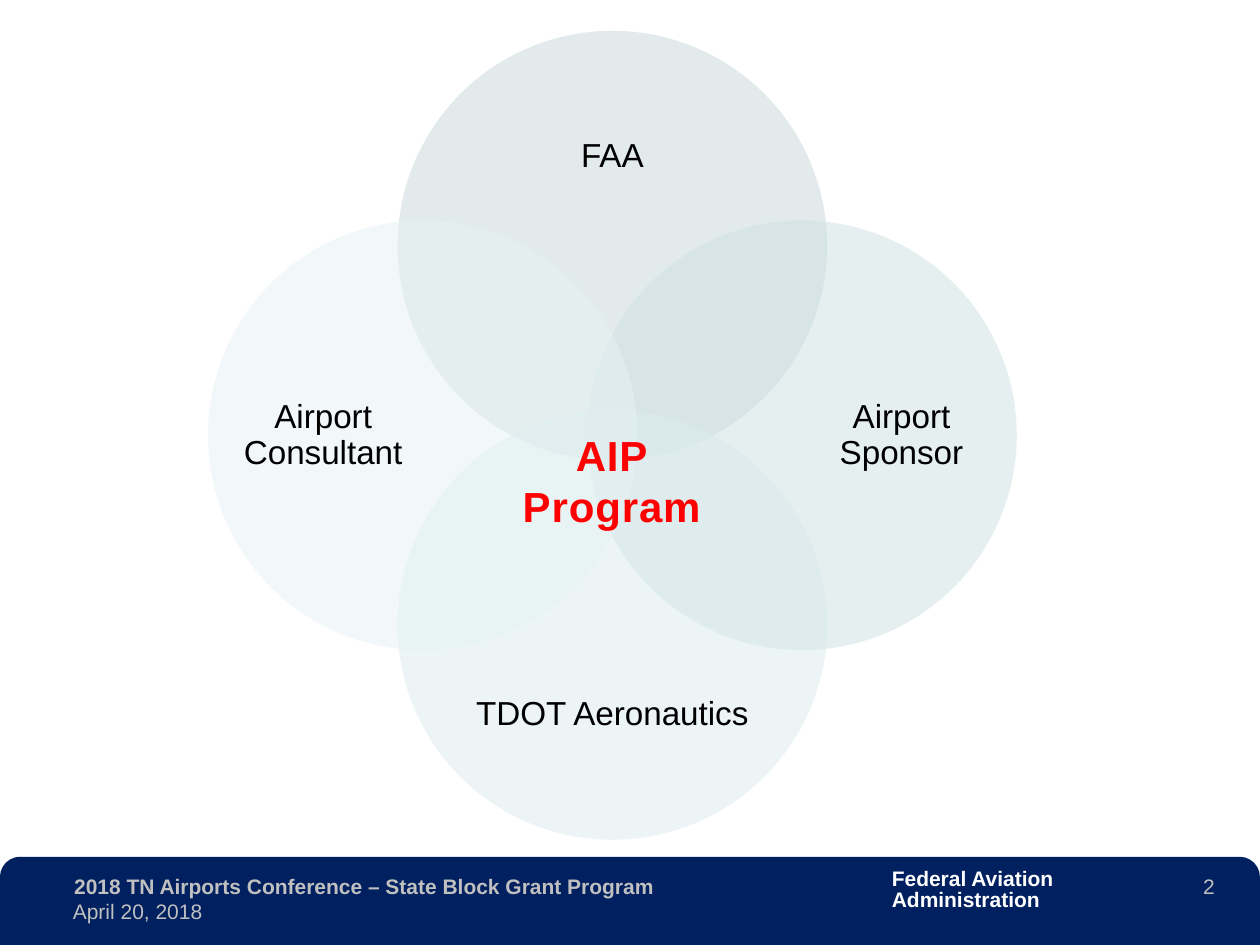
from dataclasses import dataclass

from lxml import etree
from pptx import Presentation
from pptx import util as u
from pptx.dml.color import RGBColor
from pptx.enum import shapes, text
from pptx.oxml.ns import qn

COLUMNS, ROWS = 100, 75
CENTRE = (48.6, 34.55)
DIAMETER = 34.1
CIRCLE_REACH = 15.05
PADDING = (1, 0.5)


@dataclass(frozen=True)
class Theme:
    font: str = "Arial"
    navy: str = "002060"
    silver: str = "C0C0C0"
    white: str = "FFFFFF"
    black: str = "000000"
    red: str = "FF0000"
    footer_size: int = 12
    label_size: int = 19
    heading_size: int = 24
    opacity: int = 50


@dataclass(frozen=True)
class Area:
    left: float
    top: float
    width: float
    height: float


@dataclass(frozen=True)
class Style:
    size: int
    color: str
    bold: bool = False
    align: text.PP_ALIGN = text.PP_ALIGN.LEFT
    spacing: float = 1.0


@dataclass(frozen=True)
class Partner:
    name: str
    color: str
    across: int
    down: int


@dataclass(frozen=True)
class FooterText:
    lines: tuple[str, ...]
    area: Area
    style: Style
    wrap: bool = True


THEME = Theme()
LABEL = Style(THEME.label_size, THEME.black, align=text.PP_ALIGN.CENTER, spacing=0.9)
HEADING = Style(THEME.heading_size, THEME.red, True, text.PP_ALIGN.CENTER)
PARTNERS = (
    Partner("FAA", "C6D7D9", 0, -1),
    Partner("Airport Sponsor", "CFE1E3", 1, 0),
    Partner("TDOT Aeronautics", "DAEBEC", 0, 1),
    Partner("Airport Consultant", "E6F3F4", -1, 0),
)
FOOTER = (
    FooterText(("Federal Aviation", "Administration"), Area(69.8, 68.5, 15, 4.4),
               Style(THEME.footer_size, THEME.white, True, spacing=0.85), wrap=False),
    FooterText(("2018 TN Airports Conference – State Block Grant Program",),
               Area(4.9, 68.8, 52.3, 3), Style(THEME.footer_size, THEME.silver, True)),
    FooterText(("April 20, 2018",), Area(4.8, 70.8, 40.9, 3),
               Style(THEME.footer_size, THEME.silver)),
    FooterText(("2",), Area(89.8, 68.8, 7.6, 3),
               Style(THEME.footer_size, THEME.silver, align=text.PP_ALIGN.RIGHT)),
)


class Canvas:
    def __init__(self, deck, page) -> None:
        self.page = page
        self.column = deck.slide_width / COLUMNS
        self.row = deck.slide_height / ROWS

    def place(self, area: Area) -> tuple[int, int, int, int]:
        return (round(area.left * self.column), round(area.top * self.row),
                round(area.width * self.column), round(area.height * self.row))

    def add_shape(self, kind, area: Area, color: str):
        shape = self.page.shapes.add_shape(kind, *self.place(area))
        shape.shadow.inherit = False
        shape.fill.solid()
        shape.fill.fore_color.rgb = RGBColor.from_string(color)
        shape.line.fill.background()
        return shape

    def add_text(self, lines: tuple[str, ...], area: Area, style: Style,
                 anchor=text.MSO_ANCHOR.TOP, padding=PADDING, wrap: bool = True) -> None:
        box = self.page.shapes.add_textbox(*self.place(area))
        self.fill_text(box, lines, style, anchor, padding, wrap)

    def fill_text(self, box, lines: tuple[str, ...], style: Style,
                  anchor=text.MSO_ANCHOR.TOP, padding=PADDING, wrap: bool = True) -> None:
        frame = box.text_frame
        frame.word_wrap = wrap
        frame.auto_size = text.MSO_AUTO_SIZE.NONE
        frame.vertical_anchor = anchor
        frame.margin_left = frame.margin_right = round(padding[0] * self.column)
        frame.margin_top = frame.margin_bottom = round(padding[1] * self.row)
        frame.text = "\n".join(lines)
        for para in frame.paragraphs:
            para.alignment = style.align
            para.line_spacing = style.spacing
            para.space_before = u.Pt(0)
            para.font.name = THEME.font
            para.font.size = u.Pt(style.size)
            para.font.bold = style.bold
            para.font.color.rgb = RGBColor.from_string(style.color)


def centred(across: float, down: float, width: float, height: float) -> Area:
    return Area(CENTRE[0] + across - width / 2, CENTRE[1] + down - height / 2,
                width, height)


def draw_footer(canvas: Canvas) -> None:
    band = canvas.add_shape(shapes.MSO_SHAPE.ROUND_2_SAME_RECTANGLE,
                            Area(0, 68, COLUMNS, 7), THEME.navy)
    band.adjustments[0] = 0.23
    for item in FOOTER:
        canvas.add_text(item.lines, item.area, item.style, wrap=item.wrap)


def draw_partner(canvas: Canvas, partner: Partner) -> None:
    circle = canvas.add_shape(
        shapes.MSO_SHAPE.OVAL,
        centred(partner.across * CIRCLE_REACH, partner.down * CIRCLE_REACH,
                DIAMETER, DIAMETER),
        partner.color)
    color = circle._element.spPr.find(qn("a:solidFill")).find(qn("a:srgbClr"))
    etree.SubElement(color, qn("a:alpha"), val=str(THEME.opacity * 1000))
    if partner.across:
        area = centred(partner.across * 22.95, 0, 13.1, 26.2)
    else:
        area = centred(0, partner.down * 22.15, 26.2, 10.8)
    canvas.add_text((partner.name,), area, LABEL, text.MSO_ANCHOR.MIDDLE, (0, 0))


def draw_heading(canvas: Canvas) -> None:
    title = canvas.page.shapes.title
    title.left, title.top, title.width, title.height = canvas.place(
        Area(38.9, 33.6, 19.3, 9.1))
    canvas.fill_text(title, ("AIP Program",), HEADING)
    for span in title.text_frame.paragraphs[0].runs:
        span._r.get_or_add_rPr().set("spc", "50")
    canvas.page.shapes._spTree.append(title._element)


def main() -> None:
    deck = Presentation()
    deck.slide_width, deck.slide_height = u.Inches(10), u.Inches(7.5)
    page = deck.slides.add_slide(deck.slide_layouts.get_by_name("Title Only"))
    canvas = Canvas(deck, page)
    draw_footer(canvas)
    for partner in PARTNERS:
        draw_partner(canvas, partner)
    draw_heading(canvas)
    deck.save("out.pptx")


if __name__ == "__main__":
    main()
